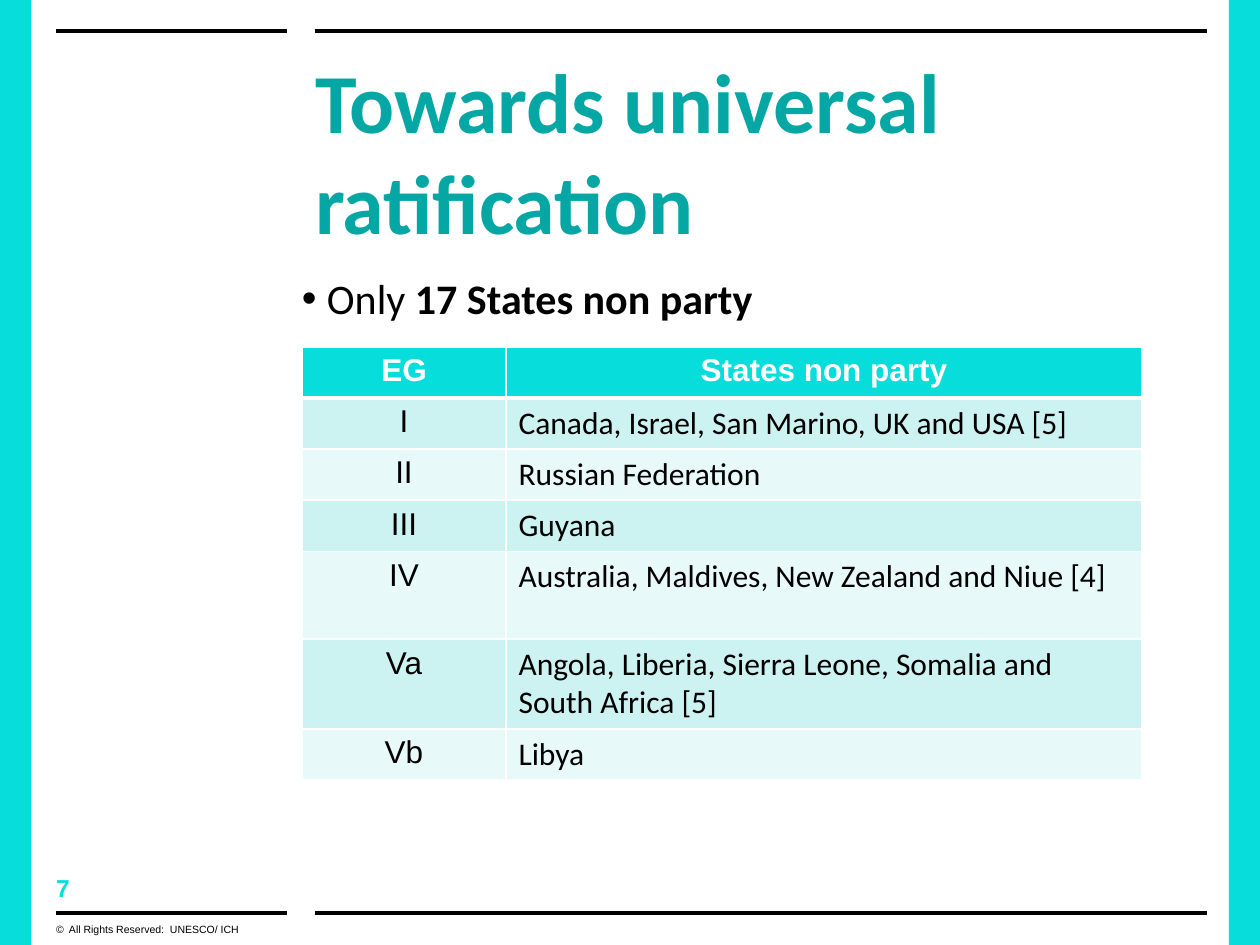
import dataclasses

import pptx
import pptx.dml.color
import pptx.enum.shapes
import pptx.enum.text
import pptx.oxml
import pptx.oxml.ns
import pptx.util

ALIGN = pptx.enum.text.PP_ALIGN
DRAWING_NS = pptx.oxml.ns.nsdecls("a")


@dataclasses.dataclass(frozen=True)
class Theme:
    accent: str = "07DEDB"
    heading: str = "05A7A4"
    ink: str = "000000"
    paper: str = "FFFFFF"
    bands: tuple = ("CCF2F1", "E7F9F8")
    sans: str = "Arial"
    body: str = "Calibri"
    title_size: int = 48
    bullet_size: int = 24
    table_size: int = 18
    number_size: int = 14
    notice_size: int = 6


def px(length):
    return pptx.util.Emu(round(length * 914400 / 126))


def rgb(value):
    return pptx.dml.color.RGBColor.from_string(value)


class SlideBuilder:
    def __init__(self, slide, theme):
        self.slide = slide
        self.theme = theme

    def style_font(self, font, color, **values):
        for name, value in values.items():
            setattr(font, name, value)
        font.color.rgb = rgb(color)

    def bar(self, left, top, width, height):
        bar = self.slide.shapes.add_shape(
            pptx.enum.shapes.MSO_SHAPE.RECTANGLE, px(left), px(top), px(width), px(height))
        bar.shadow.inherit = False
        bar.fill.solid()
        bar.fill.fore_color.rgb = rgb(self.theme.accent)
        bar.line.fill.background()

    def rule(self, start, end, y):
        rule = self.slide.shapes.add_connector(
            pptx.enum.shapes.MSO_CONNECTOR.STRAIGHT, px(start), px(y), px(end), px(y))
        rule.line.color.rgb = rgb(self.theme.ink)
        rule.line.width = pptx.util.Pt(2)
        properties = rule._element.spPr
        properties.append(pptx.oxml.parse_xml(f"<a:effectLst {DRAWING_NS}/>"))

    def frame(self, shape):
        settings = {
            "margin_left": 0, "margin_top": 0, "margin_right": 0, "margin_bottom": 0,
            "word_wrap": True,
            "auto_size": pptx.enum.text.MSO_AUTO_SIZE.NONE,
            "vertical_anchor": pptx.enum.text.MSO_ANCHOR.TOP,
        }
        for name, value in settings.items():
            setattr(shape.text_frame, name, value)
        return shape.text_frame.paragraphs[0]

    def title(self, words, left, top, width, height):
        title = self.slide.shapes.title
        box = {"left": left, "top": top, "width": width, "height": height}
        for name, value in box.items():
            setattr(title, name, px(value))
        title.text_frame.text = words
        paragraph = self.frame(title)
        paragraph.alignment = ALIGN.LEFT
        self.style_font(paragraph.runs[0].font, self.theme.heading, name=self.theme.body,
                        size=pptx.util.Pt(self.theme.title_size), bold=True)

    def text(self, runs, left, top, width, height, size, face, color, bullet=False):
        box = self.slide.shapes.add_textbox(px(left), px(top), px(width), px(height))
        paragraph = self.frame(box)
        if bullet:
            properties = paragraph._p.get_or_add_pPr()
            properties.set("marL", str(px(25)))
            properties.set("indent", str(px(-25)))
            for tag in ('buFont typeface="Arial"', 'buChar char="•"'):
                name, attribute = tag.split(" ")
                properties.append(pptx.oxml.parse_xml(f"<a:{name} {DRAWING_NS} {attribute}/>"))
        for words, bold in runs:
            run = paragraph.add_run()
            run.text = words
            self.style_font(run.font, color, name=face, size=pptx.util.Pt(size), bold=bold)

    def cell_borders(self, cell, widths):
        properties = cell._tc.get_or_add_tcPr()
        for side, width in widths.items():
            properties.append(pptx.oxml.parse_xml(
                f'<a:ln{side} {DRAWING_NS} w="{pptx.util.Pt(width)}"><a:solidFill>'
                f'<a:srgbClr val="{self.theme.paper}"/></a:solidFill></a:ln{side}>'))

    def table(self, rows, left, top, columns, heights):
        table = self.slide.shapes.add_table(
            len(rows), len(columns), px(left), px(top), px(sum(columns)), px(sum(heights))).table
        for column, width in zip(table.columns, columns):
            column.width = px(width)
        for row, height in zip(table.rows, heights):
            row.height = px(height)
        for row, values in enumerate(rows):
            header = row == 0
            fill = self.theme.accent if header else self.theme.bands[(row - 1) % 2]
            borders = {"L": 1, "R": 1, "T": 3 if row == 1 else 1, "B": 3 if header else 1}
            for column, words in enumerate(values):
                cell = table.cell(row, column)
                self.cell_borders(cell, borders)
                cell.fill.solid()
                cell.fill.fore_color.rgb = rgb(fill)
                cell.text = words
                centred = header or column == 0
                paragraph = cell.text_frame.paragraphs[0]
                paragraph.alignment = ALIGN.CENTER if centred else ALIGN.LEFT
                self.style_font(
                    paragraph.runs[0].font, self.theme.paper if header else self.theme.ink,
                    name=self.theme.sans if centred else self.theme.body,
                    size=pptx.util.Pt(self.theme.table_size), bold=header)


def main():
    theme = Theme()
    deck = pptx.Presentation()
    deck.slide_width, deck.slide_height = px(1260), px(945)
    page = SlideBuilder(deck.slides.add_slide(deck.slide_layouts[5]), theme)

    for left in (0, 1229):
        page.bar(left, 0, 31, 945)
    for y in (31, 913):
        for start, end in ((56, 287), (315, 1207)):
            page.rule(start, end, y)

    page.text([("7", True)], 56, 873, 144, 30, theme.number_size, theme.sans, theme.accent)
    page.text([("©  All Rights Reserved:  UNESCO/ ICH", False)], 56, 923, 219, 13,
              theme.notice_size, theme.sans, theme.ink)

    page.title("Towards universal ratification", 315, 50, 892, 271)
    page.text([("Only ", False), ("17 States non party", True)], 302, 273, 893, 50,
              theme.bullet_size, theme.body, theme.ink, bullet=True)

    states_by_group = [
        ("EG", "States non party"),
        ("I", "Canada, Israel, San Marino, UK and USA [5]"),
        ("II", "Russian Federation"),
        ("III", "Guyana"),
        ("IV", "Australia, Maldives, New Zealand and Niue [4]"),
        ("Va", "Angola, Liberia, Sierra Leone, Somalia and South Africa [5]"),
        ("Vb", "Libya"),
    ]
    page.table(states_by_group, 302, 347, (204, 636), (51, 51, 51, 51, 88, 88, 51))

    deck.save("out.pptx")


if __name__ == "__main__":
    main()
